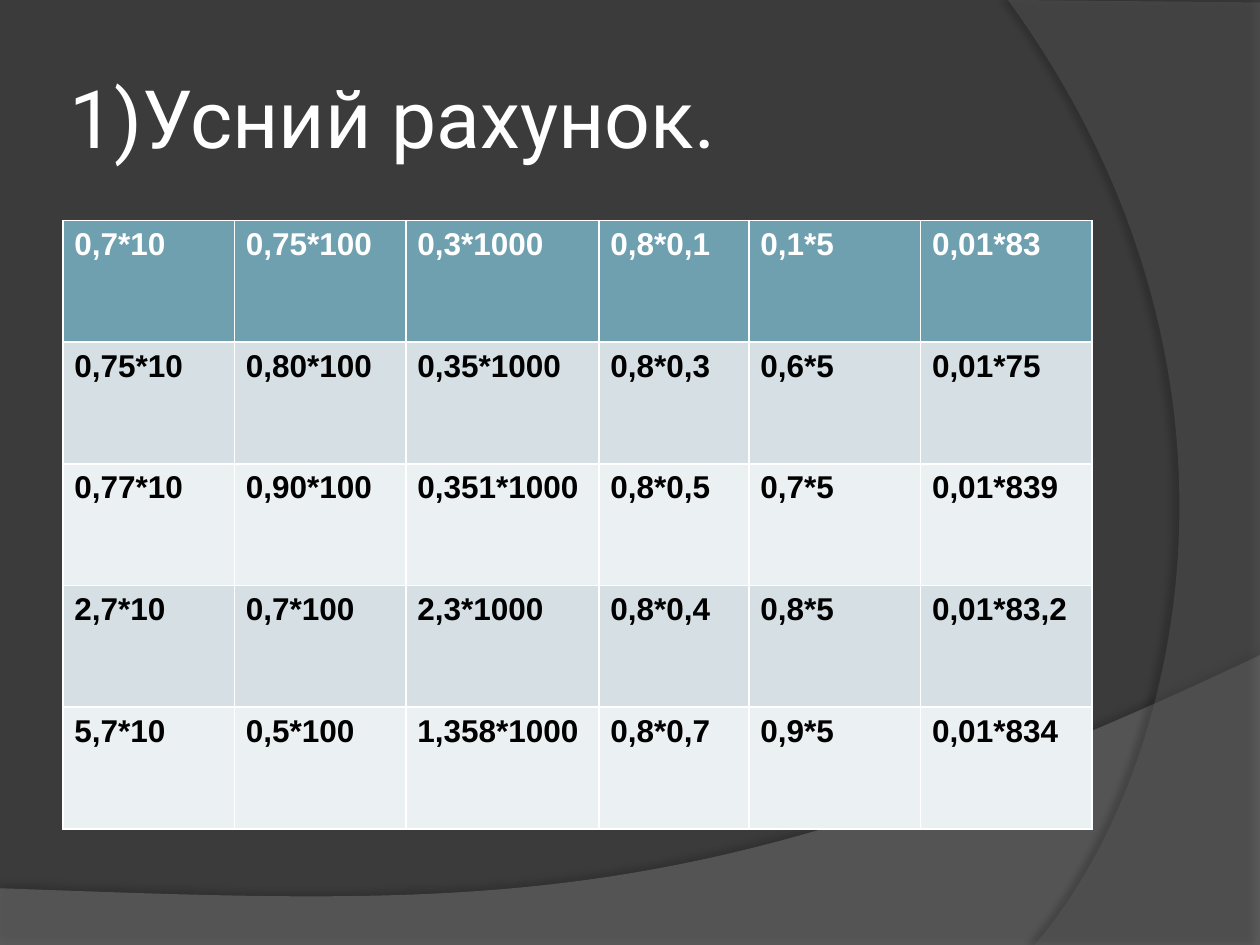
from lxml.etree import SubElement
from pptx import Presentation
from pptx.dml.color import RGBColor
from pptx.enum.text import MSO_ANCHOR
from pptx.oxml.ns import qn
from pptx.util import Inches, Pt

COLORS = {
    "background": "3B3B3B",
    "lower wave": "7F7F7F",
    "right arc": "5E5E5E",
    "shadow": "000000",
    "white": "FFFFFF",
    "black": "000000",
    "header": "6EA0B0",
    "dark band": "D5DFE4",
    "light band": "EBF0F2",
}
TABLE_WIDTH = 8.17
COLUMN_SHARES = [1.36, 1.36, 1.53, 1.19, 1.36, 1.36]
EXERCISES = [
    ["0,7*10", "0,75*100", "0,3*1000", "0,8*0,1", "0,1*5", "0,01*83"],
    ["0,75*10", "0,80*100", "0,35*1000", "0,8*0,3", "0,6*5", "0,01*75"],
    ["0,77*10", "0,90*100", "0,351*1000", "0,8*0,5", "0,7*5", "0,01*839"],
    ["2,7*10", "0,7*100", "2,3*1000", "0,8*0,4", "0,8*5", "0,01*83,2"],
    ["5,7*10", "0,5*100", "1,358*1000", "0,8*0,7", "0,9*5", "0,01*834"],
]


def color(name):
    return RGBColor.from_string(COLORS[name])


def add_alpha(color_element, percent):
    SubElement(color_element, qn("a:alpha"), val=str(percent * 1000))


def add_shadow(shape, opacity, blur, distance, angle):
    shape.shadow.inherit = False
    effects = shape._element.spPr.find(qn("a:effectLst"))
    shadow = SubElement(effects, qn("a:outerShdw"), blurRad=str(Pt(blur)),
                        dist=str(Pt(distance)), dir=str(angle * 60000),
                        algn="ctr", rotWithShape="0")
    shade = SubElement(shadow, qn("a:srgbClr"), val=COLORS["shadow"])
    add_alpha(shade, opacity)


def bend_last_edge(shape, controls):
    """Turn the last straight edge into a cubic curve with two control points."""
    edge = shape._element.spPr.findall(".//" + qn("a:lnTo"))[-1]
    bend = edge.makeelement(qn("a:cubicBezTo"), {})
    edge.getparent().replace(edge, bend)
    for x, y in controls:
        SubElement(bend, qn("a:pt"), x=str(Inches(x) - shape.left),
                   y=str(Inches(y) - shape.top))
    bend.append(edge.find(qn("a:pt")))


def add_swoosh(page, fill_name, corners, controls, opacity, shadow):
    """Translucent background area, curved along its last edge."""
    points = [(Inches(x), Inches(y)) for x, y in corners]
    builder = page.shapes.build_freeform(*points[0])
    builder.add_line_segments(points[1:], close=True)
    shape = builder.convert_to_shape()
    bend_last_edge(shape, controls)
    shape.fill.solid()
    shape.fill.fore_color.rgb = color(fill_name)
    add_alpha(shape._element.spPr.find(".//" + qn("a:srgbClr")), opacity)
    shape.line.fill.background()
    add_shadow(shape, *shadow)


def add_span(para, text, font, size, color_name, bold=False):
    span = para.add_run()
    span.text = text
    span.font.name = font
    span.font.size = Pt(size)
    span.font.bold = bold
    span.font.color.rgb = color(color_name)


def add_title(page, text):
    box = page.shapes.add_textbox(Inches(0.5), Inches(0.3), Inches(8.17), Inches(1.25))
    frame = box.text_frame
    frame.word_wrap = True
    frame.vertical_anchor = MSO_ANCHOR.MIDDLE
    frame.margin_left = frame.margin_right = Inches(0.05)
    frame.margin_top = frame.margin_bottom = Inches(0.05)
    add_span(frame.paragraphs[0], text, "Roboto", 46, "white")


def add_borders(cell):
    properties = cell._tc.get_or_add_tcPr()
    for position, side in enumerate(("a:lnL", "a:lnR", "a:lnT", "a:lnB")):
        line = properties.makeelement(qn(side), {"w": str(Pt(1))})
        fill = SubElement(line, qn("a:solidFill"))
        SubElement(fill, qn("a:srgbClr"), val=COLORS["white"])
        properties.insert(position, line)


def fill_cell(cell, text, fill_name, text_color):
    cell.fill.solid()
    cell.fill.fore_color.rgb = color(fill_name)
    cell.margin_left = cell.margin_right = Inches(0.09)
    cell.margin_top = cell.margin_bottom = Inches(0.05)
    add_span(cell.text_frame.paragraphs[0], text, "Arial", 18, text_color, bold=True)
    add_borders(cell)


def add_exercise_table(page):
    table = page.shapes.add_table(
        len(EXERCISES), len(COLUMN_SHARES),
        Inches(0.5), Inches(1.75), Inches(TABLE_WIDTH), Inches(4.83)).table
    for column, share in zip(table.columns, COLUMN_SHARES):
        column.width = Inches(TABLE_WIDTH * share / sum(COLUMN_SHARES))
    for row, texts in enumerate(EXERCISES):
        if row == 0:
            fill_name, text_color = "header", "white"
        else:
            fill_name = "dark band" if row % 2 else "light band"
            text_color = "black"
        for column, text in enumerate(texts):
            fill_cell(table.cell(row, column), text, fill_name, text_color)


def main():
    deck = Presentation()
    deck.slide_width, deck.slide_height = Inches(10), Inches(7.5)
    page = deck.slides.add_slide(deck.slide_layouts[6])
    page.background.fill.solid()
    page.background.fill.fore_color.rgb = color("background")

    add_swoosh(page, "lower wave", [(0, 7.5), (10, 7.5), (10, 5.2), (0, 7.05)],
               [(5.59, 7.29), (3.91, 7.19)], 45, (35, 4, 3.5, 270))
    add_swoosh(page, "right arc", [(10, 0.02), (10, 7.5), (8.21, 7.5), (8, 0)],
               [(9.35, 6.19), (10.18, 3)], 40, (45, 4, 4, 180))

    add_title(page, "1)Усний рахунок.")
    add_exercise_table(page)
    deck.save("out.pptx")


if __name__ == "__main__":
    main()
